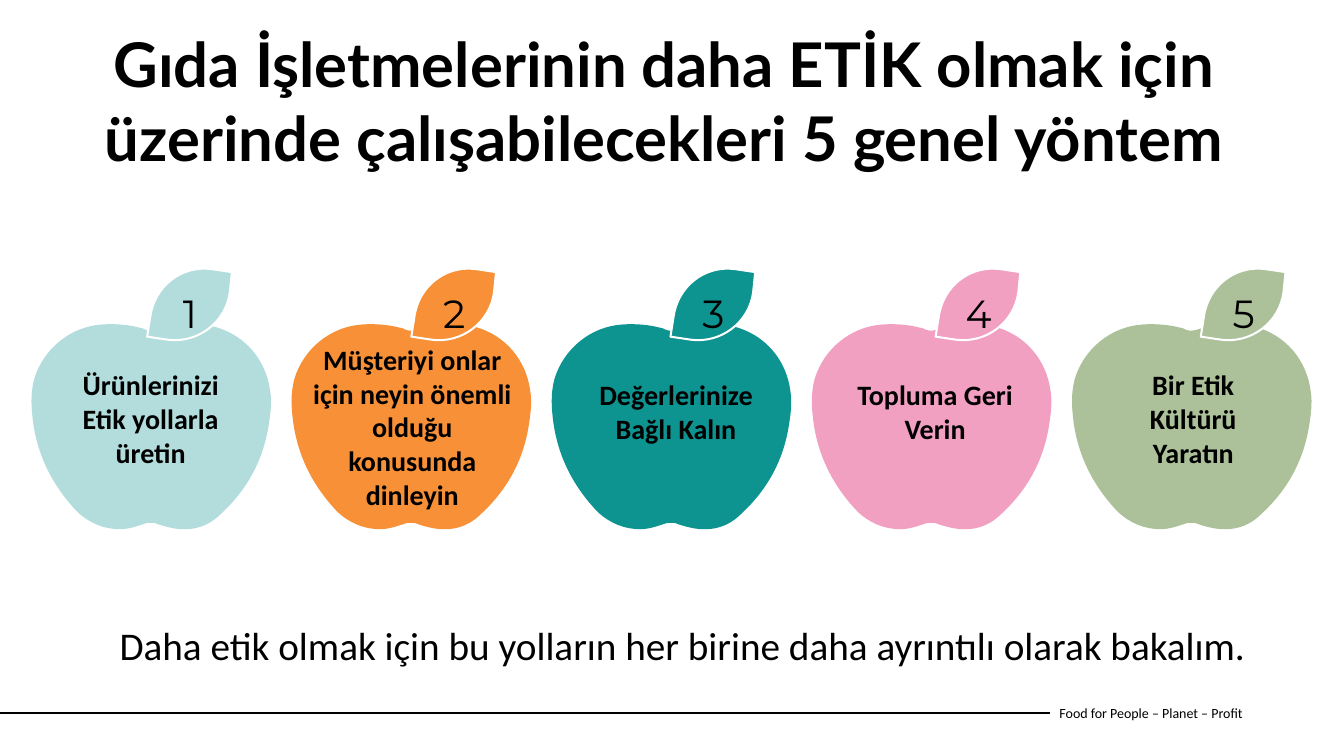
from dataclasses import dataclass

from lxml.etree import SubElement
from pptx import Presentation
from pptx.dml.color import RGBColor
from pptx.enum.shapes import MSO_CONNECTOR
from pptx.enum.text import MSO_ANCHOR, MSO_AUTO_SIZE, PP_ALIGN
from pptx.oxml.ns import qn
from pptx.util import Inches, Pt


@dataclass(frozen=True)
class Theme:
    black: str = "000000"
    white: str = "FFFFFF"
    apple_colors: tuple = ("B2DDDC", "F79037", "0D9390", "F1A0C2", "ACC199")
    title_font: str = "Lato"
    body_font: str = "Calibri"
    number_font: str = "Montserrat"
    title_size: int = 44
    large_size: int = 28
    label_size: int = 20
    footer_size: int = 10


# Outlines in inches from the top left corner: a start point, then
# two-number line segments and six-number Bézier segments.
APPLE = [
    (2.38, 0.68),
    (2.34, 0.37, 2.13, 0.12, 1.82, 0.04),
    (1.67, 0, 1.52, 0.01, 1.37, 0.04),
    (1.34, 0.05, 1.32, 0.05, 1.29, 0.06),
    (1.26, 0.07, 1.22, 0.08, 1.2, 0.08),
    (1.18, 0.08, 1.16, 0.08, 1.14, 0.07),
    (1.12, 0.06, 1.1, 0.05, 1.08, 0.05),
    (0.97, 0.02, 0.82, 0.01, 0.71, 0.02),
    (0.4, 0.04, 0.13, 0.26, 0.04, 0.56),
    (0, 0.71, 0.01, 0.85, 0.03, 1),
    (0.08, 1.34, 0.23, 1.63, 0.47, 1.88),
    (0.59, 1.99, 0.73, 2.05, 0.89, 2.05),
    (0.98, 2.05, 1.06, 2.02, 1.15, 1.99),
    (1.18, 1.99, 1.21, 1.98, 1.24, 1.99),
    (1.29, 2.01, 1.33, 2.02, 1.37, 2.03),
    (1.57, 2.08, 1.75, 2.04, 1.89, 1.9),
    (2.14, 1.67, 2.3, 1.39, 2.36, 1.05),
    (2.38, 0.93, 2.4, 0.8, 2.38, 0.68),
]
LEAF = [
    (0.2, 0.74),
    (0, 0.71),
    (0.03, 0.52),
    (0.07, 0.21, 0.34, 0, 0.64, 0.04),
    (0.84, 0.07),
    (0.82, 0.27),
    (0.78, 0.57, 0.5, 0.78, 0.2, 0.74),
]


class SlideBuilder:
    def __init__(self, slide, theme):
        self.slide = slide
        self.theme = theme

    def text(self, content, left, top, width, height, size, font,
             bold=False, align=PP_ALIGN.CENTER, anchor=MSO_ANCHOR.TOP, grow=True):
        box = self.slide.shapes.add_textbox(
            Inches(left), Inches(top), Inches(width), Inches(height))
        frame = box.text_frame
        frame.word_wrap = True
        frame.auto_size = MSO_AUTO_SIZE.SHAPE_TO_FIT_TEXT if grow else MSO_AUTO_SIZE.NONE
        frame.vertical_anchor = anchor
        paragraph = frame.paragraphs[0]
        paragraph.alignment = align
        run = paragraph.add_run()
        run.text = content
        run.font.name = font
        run.font.size = Pt(size)
        run.font.bold = bold
        run.font.color.rgb = RGBColor.from_string(self.theme.black)

    def outline(self, outline, left, top, fill, line_width=None):
        points = [
            (Inches(left + x), Inches(top + y))
            for segment in outline
            for x, y in zip(segment[::2], segment[1::2])
        ]
        builder = self.slide.shapes.build_freeform(*points[0])
        builder.add_line_segments(points[1:], close=True)
        shape = builder.convert_to_shape()
        self.bend(shape, outline)
        shape.shadow.inherit = False
        shape.fill.solid()
        shape.fill.fore_color.rgb = RGBColor.from_string(fill)
        if line_width is None:
            shape.line.fill.background()
        else:
            shape.line.color.rgb = RGBColor.from_string(self.theme.white)
            shape.line.width = Pt(line_width)

    def bend(self, shape, outline):
        """Join the three straight steps of each Bézier segment into a curve."""
        steps = iter(list(shape._element.spPr.iter(qn("a:lnTo"))))
        for segment in outline[1:]:
            curve = next(steps)
            if len(segment) == 6:
                curve.tag = qn("a:cubicBezTo")
                for step in (next(steps), next(steps)):
                    curve.append(step[0])
                    step.getparent().remove(step)

    def line(self, left, right, top, width):
        connector = self.slide.shapes.add_connector(
            MSO_CONNECTOR.STRAIGHT, Inches(left), Inches(top), Inches(right), Inches(top))
        connector.line.color.rgb = RGBColor.from_string(self.theme.black)
        connector.line.width = Pt(width)
        SubElement(connector._element.spPr, qn("a:effectLst"))


def main():
    presentation = Presentation()
    presentation.slide_width = Inches(13.33)
    presentation.slide_height = Inches(7.5)
    theme = Theme()
    builder = SlideBuilder(
        presentation.slides.add_slide(presentation.slide_layouts[6]), theme)

    # Footer
    builder.text("Food for People – Planet – Profit", 10.41, 6.87, 2.73, 0.4,
                 theme.footer_size, theme.body_font, align=PP_ALIGN.LEFT,
                 anchor=MSO_ANCHOR.MIDDLE, grow=False)
    builder.line(0, 10.41, 7.07, 1.5)

    # Title
    builder.text(
        "Gıda İşletmelerinin daha ETİK olmak için üzerinde çalışabilecekleri 5 genel yöntem",
        0.15, 0.21, 12.88, 1.58, theme.title_size, theme.title_font, bold=True)

    # Numbered apples: label, label box, left edge of the leaf
    apples = [
        ("Ürünlerinizi Etik yollarla üretin", (0.61, 3.6, 1.77, 1.11), 1.46),
        ("Müşteriyi onlar için neyin önemli olduğu konusunda dinleyin",
         (2.96, 3.35, 2.26, 1.78), 4.08),
        ("Değerlerinize Bağlı Kalın", (5.82, 3.7, 1.77, 0.77), 6.65),
        ("Topluma Geri Verin", (8.29, 3.7, 1.97, 0.77), 9.28),
        ("Bir Etik Kültürü Yaratın", (10.95, 3.6, 1.77, 1.11), 11.91),
    ]
    for index, (label, label_box, leaf_left) in enumerate(apples):
        color = theme.apple_colors[index]
        builder.outline(APPLE, 0.3 + 2.58 * index, 3.2, color)
        builder.outline(LEAF, leaf_left, 2.63, color, line_width=1.45)
        builder.text(str(index + 1), leaf_left + 0.05, 2.82, 0.75, 0.57,
                     theme.large_size, theme.number_font)
        builder.text(label, *label_box, theme.label_size, theme.body_font, bold=True)

    # Closing sentence
    builder.text(
        "Daha etik olmak için bu yolların her birine daha ayrıntılı olarak bakalım.",
        0.92, 6.11, 11.69, 0.57, theme.large_size, theme.body_font)

    presentation.save("out.pptx")


if __name__ == "__main__":
    main()
